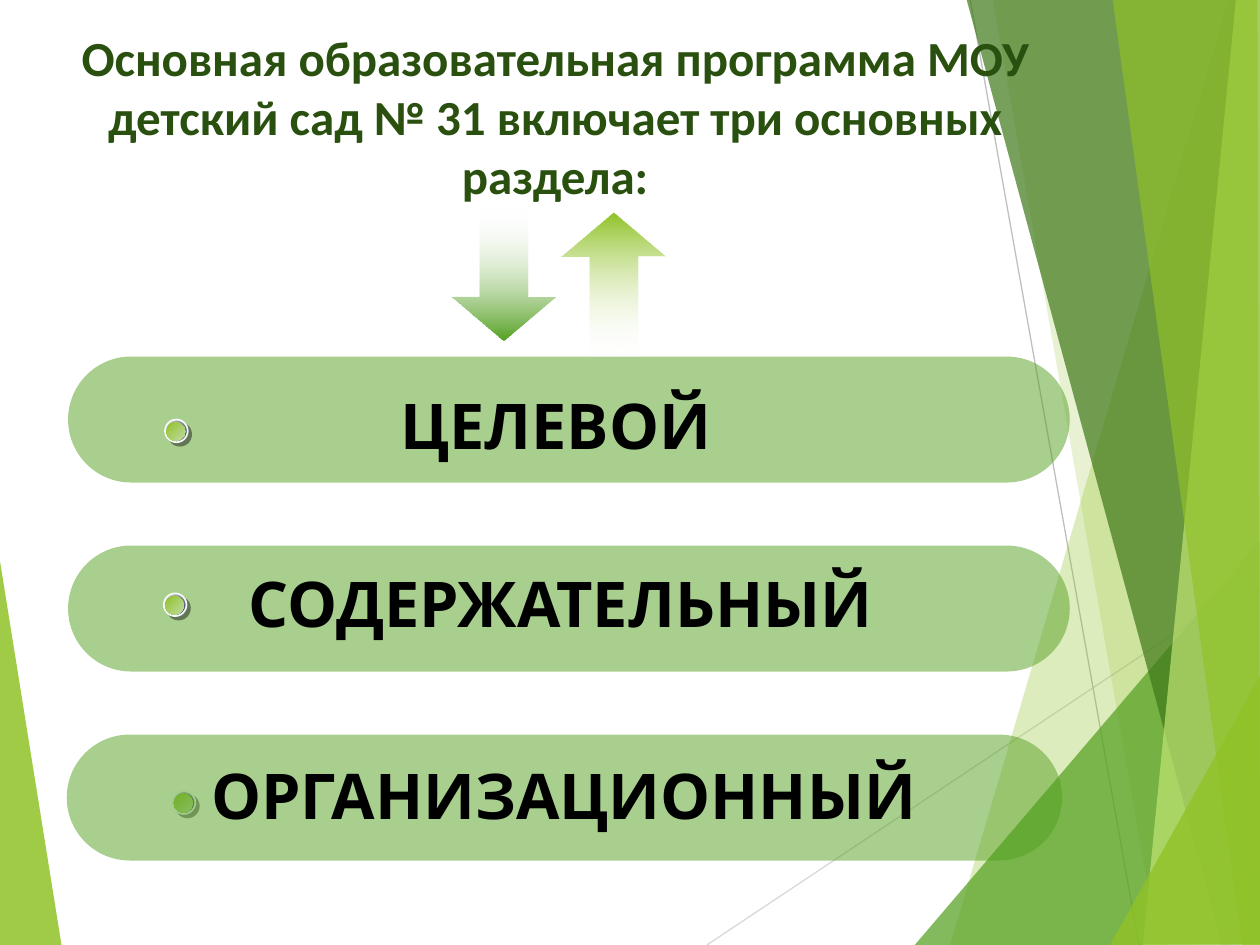
import pptx
import pptx.util
import pptx.dml.color
import pptx.enum.shapes
import pptx.enum.text
import pptx.oxml
import pptx.oxml.ns
from lxml import etree

PX = 9144
RGB = pptx.dml.color.RGBColor
KIND = pptx.enum.shapes.MSO_SHAPE
LIME = RGB(0x90, 0xC2, 0x26)
GREEN = RGB(0x54, 0xA0, 0x21)
DARK = RGB(0x3F, 0x78, 0x19)
PALE = RGB(0xC0, 0xE4, 0x74)
HEAD = RGB(0x2A, 0x50, 0x10)
MIST = RGB(0xC2, 0xDB, 0xA6)
FOG = RGB(0xDD, 0xDD, 0xE1)
NAVY = RGB(0x22, 0x38, 0x64)
RIM = RGB(0xF8, 0xF8, 0xF8)
GREY = RGB(0xBF, 0xBF, 0xBF)
SILVER = RGB(0xD9, 0xD9, 0xD9)
BLACK = RGB(0, 0, 0)
WHITE = RGB(255, 255, 255)


def emu(box):
    return [v * PX for v in box]


def fade(item, part):
    tint = next(item._element.iter(pptx.oxml.ns.qn("a:srgbClr")))
    etree.SubElement(tint, pptx.oxml.ns.qn("a:alpha"), val=str(part * 1000))


def paint(item, color, part=100):
    item.shadow.inherit = False
    item.line.fill.background()
    item.fill.solid()
    item.fill.fore_color.rgb = color
    if part < 100:
        fade(item, part)


def blend(item, first, last, angle):
    item.shadow.inherit = False
    item.line.fill.background()
    item.fill.gradient()
    item.fill.gradient_angle = -angle % 360
    for stop, color in zip(item.fill.gradient_stops, (first, last)):
        stop.color.rgb = color
    for stop, place in zip(item.fill.gradient_stops, (0, 1)):
        stop.position = place


def write(slide, box, text, font="Karla", size=36, color=BLACK, space=None, grow=False):
    item = slide.shapes.add_textbox(*emu(box))
    frame = item.text_frame
    frame.word_wrap = True
    if grow:
        frame.auto_size = pptx.enum.text.MSO_AUTO_SIZE.SHAPE_TO_FIT_TEXT
    line = frame.paragraphs[0]
    line.alignment = pptx.enum.text.PP_ALIGN.CENTER
    if space:
        line.line_spacing = space
    run = line.add_run()
    run.text = text
    run.font.name = font
    run.font.size = pptx.util.Pt(size)
    run.font.bold = True
    run.font.color.rgb = color


def shard(slide, box, points, color, part):
    left, top = box[:2]
    spots = [(left + x, top + y) for x, y in points]
    pen = slide.shapes.build_freeform(*spots[0], scale=PX)
    pen.add_line_segments(spots[1:], close=True)
    paint(pen.convert_to_shape(), color, part)


def ray(slide, box, start, end, color):
    left, top = box[:2]
    item = slide.shapes.add_connector(
        pptx.enum.shapes.MSO_CONNECTOR.STRAIGHT,
        *emu((left + start[0], top + start[1], left + end[0], top + end[1])))
    item.line.color.rgb = color
    item.line.width = pptx.util.Pt(0.75)
    etree.SubElement(item._element.spPr, pptx.oxml.ns.qn("a:effectLst"))


def decor(slide, box):
    high = box[3]
    shard(slide, box, [(-1, 439), (49, high + 1), (-1, high)], LIME, 85)
    ray(slide, box, (561, high), (1001, 457), SILVER)
    ray(slide, box, (770, 0), (904, high), GREY)
    for color, part, points in (
        (LIME, 30, [(975, 0), (754, high), (1002, high + 1), (1001, 1)]),
        (LIME, 20, [(788, -1), (919, high), (1001, high), (1001, -1)]),
        (GREEN, 72, [(726, high), (1000, 429), (1001, high)]),
        (DARK, 70, [(767, -1), (970, high), (1001, high - 1), (1001, -1)]),
        (PALE, 70, [(981, -1), (907, high), (1001, high), (1000, -1)]),
        (LIME, 65, [(883, -1), (986, high), (1000, high), (998, -1)]),
        (LIME, 80, [(881, high), (1001, 535), (1001, high - 1)]),
    ):
        shard(slide, box, points, color, part)


def arrow(slide, box, turn, color):
    item = slide.shapes.add_shape(KIND.RIGHT_ARROW, *emu(box))
    item.rotation = turn
    item.adjustments[0] = 0.465
    item.adjustments[1] = 0.421
    blend(item, WHITE, color, 0)
    fade(item, 0)


def dot(slide, box):
    left, top, wide, high = box
    group = slide.shapes.add_group_shape()
    ring = group.shapes.add_shape(KIND.OVAL, *emu(box))
    blend(ring, FOG, NAVY, 45)
    ring.line.color.rgb = RIM
    ring.line.width = pptx.util.Pt(1)
    glow = ring._element.spPr.find(pptx.oxml.ns.qn("a:effectLst"))
    glow.append(pptx.oxml.parse_xml(
        f'<a:outerShdw {pptx.oxml.ns.nsdecls("a")} dist="35560" dir="2700000" '
        'algn="ctr" rotWithShape="0"><a:srgbClr val="1C1C1C">'
        '<a:alpha val="50000"/></a:srgbClr></a:outerShdw>'))
    core = group.shapes.add_shape(
        KIND.OVAL, *emu((left + 1, top + 2, wide - 3, high - 3)))
    blend(core, LIME, MIST, 45)


def row(slide, box, text, label, spot, under=False):
    left, top, wide, high = box
    mark = (left + spot[0], top + spot[1], 18, 18)
    if under:
        dot(slide, mark)
    bar = slide.shapes.add_shape(KIND.ROUNDED_RECTANGLE, *emu(box))
    bar.adjustments[0] = 0.5
    paint(bar, GREEN, 50)
    write(slide, (left + label[0], top + label[1], label[2], 65), text,
          space=0.9, grow=True)
    if not under:
        dot(slide, mark)


def main():
    deck = pptx.Presentation()
    deck.slide_width, deck.slide_height = emu((1000, 750))
    slide = deck.slides.add_slide(deck.slide_layouts[6])
    decor(slide, (0, 0, 1000, 750))
    write(slide, (50, 17, 781, 125),
          "Основная образовательная программа МОУ детский сад № 31 "
          "включает три основных раздела:", font="Calibri", size=28, color=HEAD)
    arrow(slide, (346, 175, 107, 83), 90, GREEN)
    arrow(slide, (428, 186, 118, 83), 270, LIME)
    rows = (
        (54, 795, "ЦЕЛЕВОЙ", (38, 26, 698), (77, 50), False),
        (54, 795, "СОДЕРЖАТЕЛЬНЫЙ", (48, 17, 686), (76, 38), False),
        (53, 790, "ОРГАНИЗАЦИОННЫЙ", (60, 19, 669), (84, 45), True),
    )
    for i, (left, wide, text, label, spot, under) in enumerate(rows):
        row(slide, (left, 283 + 150 * i, wide, 100), text, label, spot, under)
    deck.save("out.pptx")


if __name__ == "__main__":
    main()
